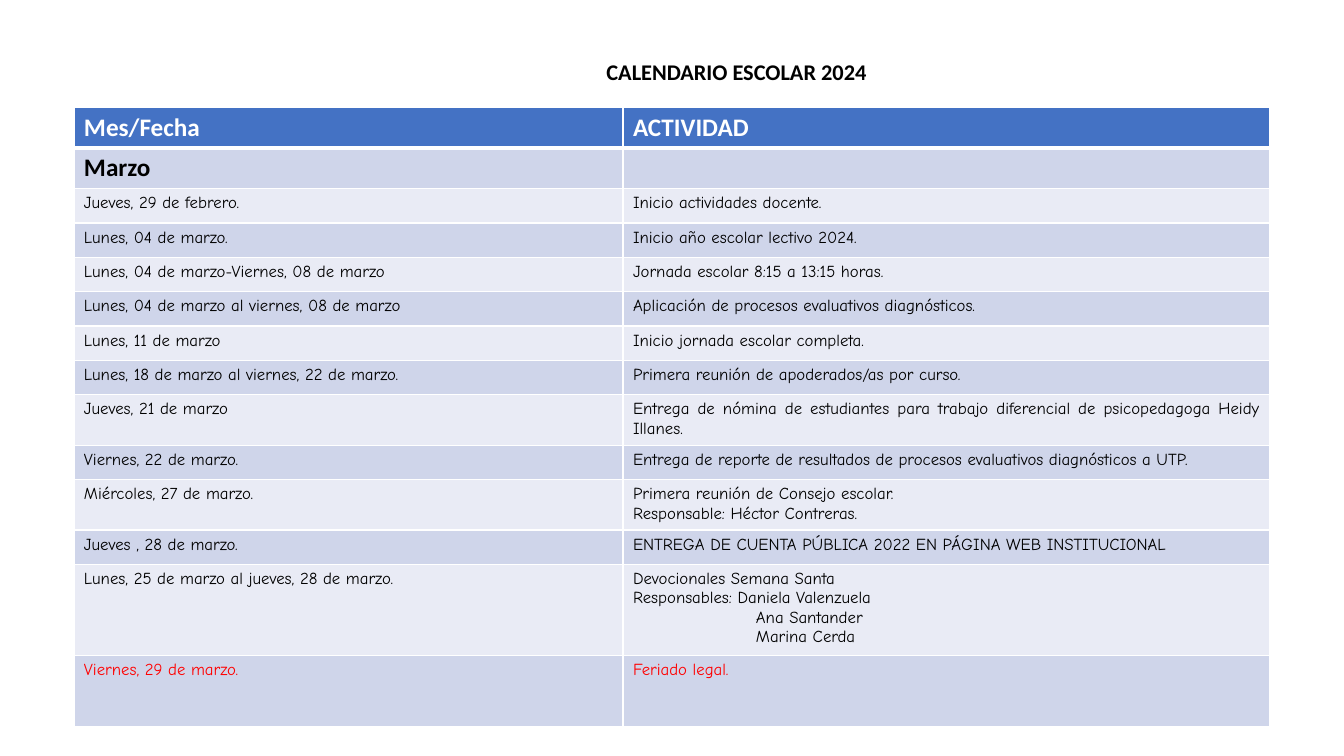
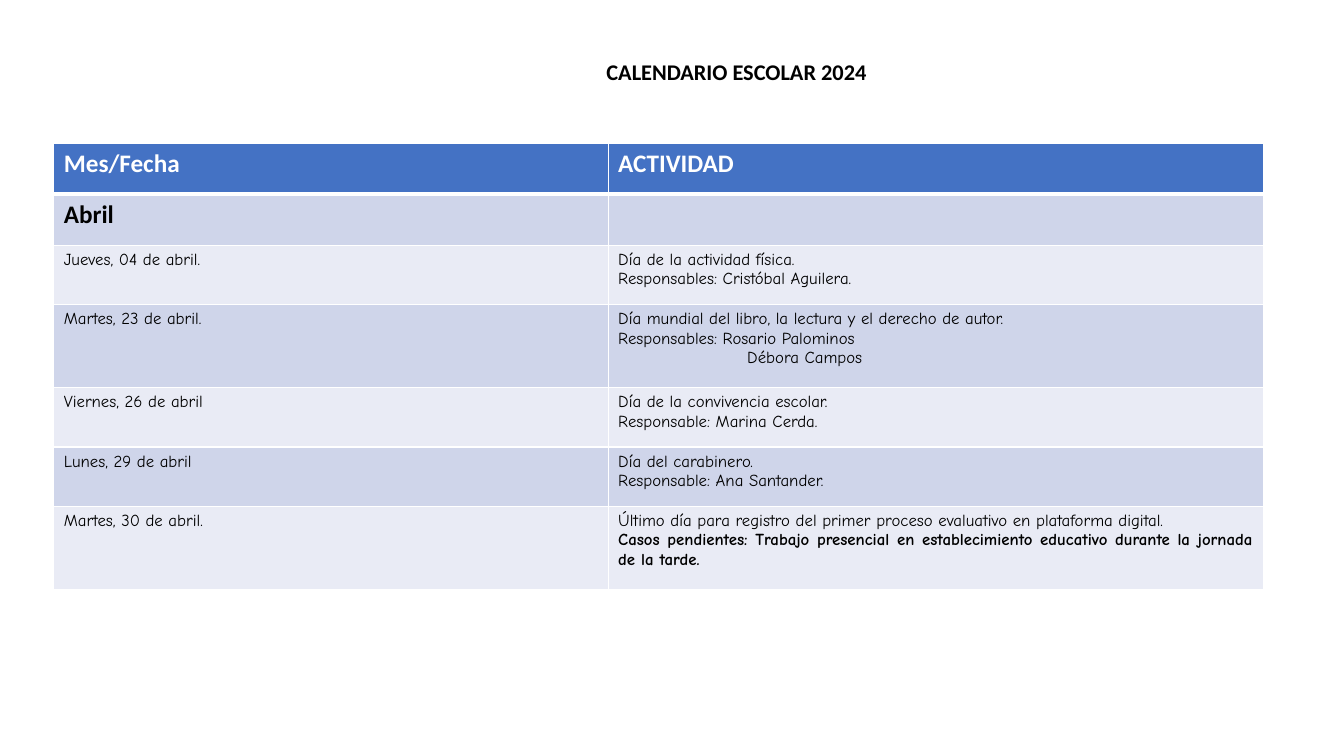
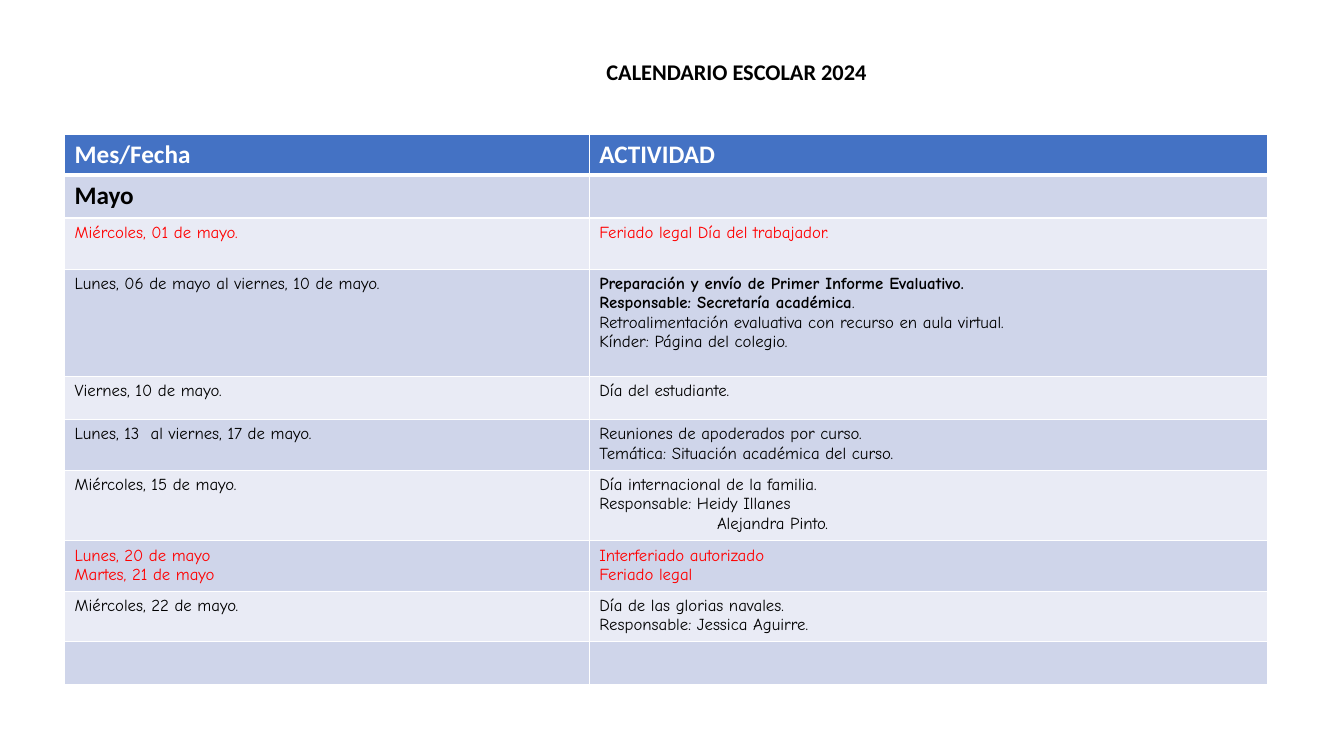
from dataclasses import dataclass

from lxml.etree import SubElement as Sub
from pptx import Presentation
from pptx.dml.color import RGBColor as RGB
from pptx.enum.text import MSO_ANCHOR as Anchor, PP_ALIGN as Align
from pptx.oxml.ns import qn
from pptx.util import Inches, Pt


@dataclass(frozen=True)
class Theme:
    head: str = "Calibri"
    body: str = "Comic Neue"
    title_size: int = 16
    head_size: int = 18
    body_size: int = 12
    ink: str = "000000"
    paper: str = "FFFFFF"
    holiday: str = "FF0000"
    band: str = "4472C4"
    dark: str = "CFD5EA"
    light: str = "E9EBF5"
    thin: int = 1
    thick: int = 3


@dataclass(frozen=True)
class Line:
    """One paragraph of a cell; tail is a closing run that is never bold."""
    text: str
    bold: bool = False
    wide: bool = False
    indent: float = 0
    tail: str = ""


@dataclass(frozen=True)
class Row:
    height: float
    date: tuple = ()
    deed: tuple = ()
    off: bool = False


@dataclass(frozen=True)
class Month:
    """Table of one month, in hundredths of the slide's width and height."""
    name: str
    left: float
    top: float
    cols: tuple
    heads: tuple
    rows: tuple


T = Theme()
WIDTH, HEIGHT = Inches(13.33), Inches(7.5)
TITLE = "CALENDARIO ESCOLAR 2024"
HEADS = ("Mes/Fecha", "ACTIVIDAD")

# Row heights that hold one, two, three or four lines of body text
ONE, TWO, THREE, FOUR = 4.55, 6.5, 9, 11.75
MID, TALL, HIGH = 5.7, 7.85, 11

MARCH = Month("Marzo", 5.5, 14.15, (40.85, 48.15), (5.4, 5.4), (
    Row(ONE, ("Jueves, 29 de febrero.",), ("Inicio actividades docente.",)),
    Row(ONE, ("Lunes, 04 de marzo.",), ("Inicio año escolar lectivo 2024.",)),
    Row(ONE, ("Lunes, 04 de marzo-Viernes, 08 de marzo",),
        ("Jornada escolar 8:15 a 13:15 horas.",)),
    Row(ONE, ("Lunes, 04 de marzo al viernes, 08 de marzo",),
        ("Aplicación de procesos evaluativos diagnósticos.",)),
    Row(ONE, ("Lunes, 11 de marzo",), ("Inicio jornada escolar completa.",)),
    Row(ONE, ("Lunes, 18 de marzo al viernes, 22 de marzo.",),
        ("Primera reunión de apoderados/as por curso.",)),
    Row(TWO, ("Jueves, 21 de marzo",),
        (Line("Entrega de nómina de estudiantes para trabajo diferencial "
              "de psicopedagoga Heidy Illanes.", wide=True),)),
    Row(ONE, ("Viernes, 22 de marzo.",),
        ("Entrega de reporte de resultados de procesos evaluativos "
         "diagnósticos a UTP.",)),
    Row(TWO, ("Miércoles, 27 de marzo.",),
        ("Primera reunión de Consejo escolar.",
         "Responsable: Héctor Contreras.")),
    Row(ONE, ("Jueves , 28 de marzo.",),
        (Line("ENTREGA DE CUENTA PÚBLICA 2022 EN PÁGINA WEB INSTITUCIONAL",
              wide=True),)),
    Row(FOUR, ("Lunes, 25 de marzo al jueves, 28 de marzo.",),
        (Line("Devocionales Semana Santa", wide=True),
         Line("Responsables: Daniela Valenzuela", wide=True),
         Line("Ana Santander", wide=True, indent=9.15),
         Line("Marina Cerda", wide=True, indent=9.15))),
    Row(9.4, ("Viernes, 29 de marzo.",),
        (Line("Feriado legal.", wide=True),), off=True),
))

APRIL = Month("Abril", 4, 18.95, (41.25, 48.75), (6.75, 6.75), (
    Row(TALL, ("Jueves, 04 de abril.",),
        ("Día de la actividad física.", "Responsables: Cristóbal Aguilera.")),
    Row(HIGH, ("Martes, 23 de abril.",),
        ("Día mundial del libro, la lectura y el derecho de autor.",
         "Responsables: Rosario Palominos",
         Line("Débora Campos", indent=9.6))),
    Row(TALL, ("Viernes, 26 de abril",),
        ("Día de la convivencia escolar.", "Responsable: Marina Cerda.")),
    Row(TALL, ("Lunes, 29 de abril",),
        ("Día del carabinero.", "Responsable: Ana Santander.")),
    Row(HIGH, ("Martes, 30 de abril.",),
        ("Último día para registro del primer proceso evaluativo en "
         "plataforma digital.",
         Line("Casos pendientes: Trabajo presencial en establecimiento "
              "educativo durante la jornada de la tarde.",
              bold=True, wide=True))),
))

MAY = Month("Mayo", 4.8, 17.75, (39.05, 50.5), (5.4, MID), (
    Row(6.8, ("Miércoles, 01 de mayo.",),
        ("Feriado legal Día del trabajador.",), off=True),
    Row(14.2, ("Lunes, 06 de mayo al viernes, 10 de mayo.",),
        (Line("Preparación y envío de Primer Informe Evaluativo.", bold=True),
         Line("Responsable: Secretaría académica", bold=True, tail="."),
         "Retroalimentación evaluativa con recurso en aula virtual.",
         "Kínder: Página del colegio.")),
    Row(MID, ("Viernes, 10 de mayo.",), ("Día del estudiante.",)),
    Row(TWO, ("Lunes, 13  al viernes, 17 de mayo.",),
        ("Reuniones de apoderados por curso.",
         "Temática: Situación académica del curso.")),
    Row(THREE, ("Miércoles, 15 de mayo.",),
        ("Día internacional de la familia.", "Responsable: Heidy Illanes",
         Line("Alejandra Pinto.", indent=8.75))),
    Row(TWO, ("Lunes, 20 de mayo", "Martes, 21 de mayo"),
        ("Interferiado autorizado", "Feriado legal"), off=True),
    Row(TWO, ("Miércoles, 22 de mayo.",),
        ("Día de las glorias navales.", "Responsable: Jessica Aguirre.")),
    Row(MID),
))


def across(share):
    return int(WIDTH * share / 100)


def down(share):
    return int(HEIGHT * share / 100)


def style(font, face, size, color, bold):
    font.name, font.size, font.bold = face, Pt(size), bold
    font.color.rgb = RGB.from_string(color)


def add_title(slide):
    box = slide.shapes.add_textbox(across(21.25), down(4), across(67.1), down(7.9))
    frame = box.text_frame
    frame.word_wrap, frame.vertical_anchor = True, Anchor.BOTTOM
    para = frame.paragraphs[0]
    para.text, para.alignment, para.line_spacing = TITLE, Align.CENTER, 0.9
    style(para.font, T.head, T.title_size, T.ink, True)


def paint(cell, fill, above, below):
    """Give a cell its white borders and its fill."""
    props = cell._tc.get_or_add_tcPr()
    for side, width in zip("LRTB", (T.thin, T.thin, above, below)):
        edge = Sub(props, qn(f"a:ln{side}"), w=str(Pt(width)))
        Sub(Sub(edge, qn("a:solidFill")), qn("a:srgbClr"), val=T.paper)
    cell.fill.solid()
    cell.fill.fore_color.rgb = RGB.from_string(fill)


def write(cell, lines, face, size, color, bold=False):
    frame = cell.text_frame
    for i, item in enumerate(lines):
        line = item if isinstance(item, Line) else Line(item, bold)
        para = frame.add_paragraph() if i else frame.paragraphs[0]
        para.add_run().text = line.text
        style(para.font, face, size, color, line.bold)
        if line.wide:
            para.alignment = Align.JUSTIFY
        if line.indent:
            para._p.get_or_add_pPr().set("marL", str(across(line.indent)))
        if line.tail:
            para.runs[0].font.bold = line.bold
            tail = para.add_run()
            tail.text, tail.font.bold = line.tail, False


def add_month(slide, month):
    heights = month.heads + tuple(row.height for row in month.rows)
    grid = slide.shapes.add_table(
        len(heights), len(month.cols), across(month.left), down(month.top),
        across(sum(month.cols)), down(sum(heights))).table
    grid.horz_banding = False
    for col, width in zip(grid.columns, month.cols):
        col.width = across(width)
    for i, height in enumerate(heights):
        grid.rows[i].height = down(height)
        fill = T.band if i == 0 else T.dark if i % 2 else T.light
        for cell in grid.rows[i].cells:
            paint(cell, fill, T.thick if i == 1 else T.thin,
                  T.thick if i == 0 else T.thin)
    for j, head in enumerate(HEADS):
        write(grid.cell(0, j), (head,), T.head, T.head_size, T.paper, True)
    write(grid.cell(1, 0), (month.name,), T.head, T.head_size, T.ink, True)
    for i, row in enumerate(month.rows, len(month.heads)):
        for j, lines in enumerate((row.date, row.deed)):
            write(grid.cell(i, j), lines, T.body, T.body_size,
                  T.holiday if row.off else T.ink)


def main():
    deck = Presentation()
    deck.slide_width, deck.slide_height = WIDTH, HEIGHT
    for month in (MARCH, APRIL, MAY):
        slide = deck.slides.add_slide(deck.slide_layouts[6])
        add_title(slide)
        add_month(slide, month)
    deck.save("out.pptx")


if __name__ == "__main__":
    main()
